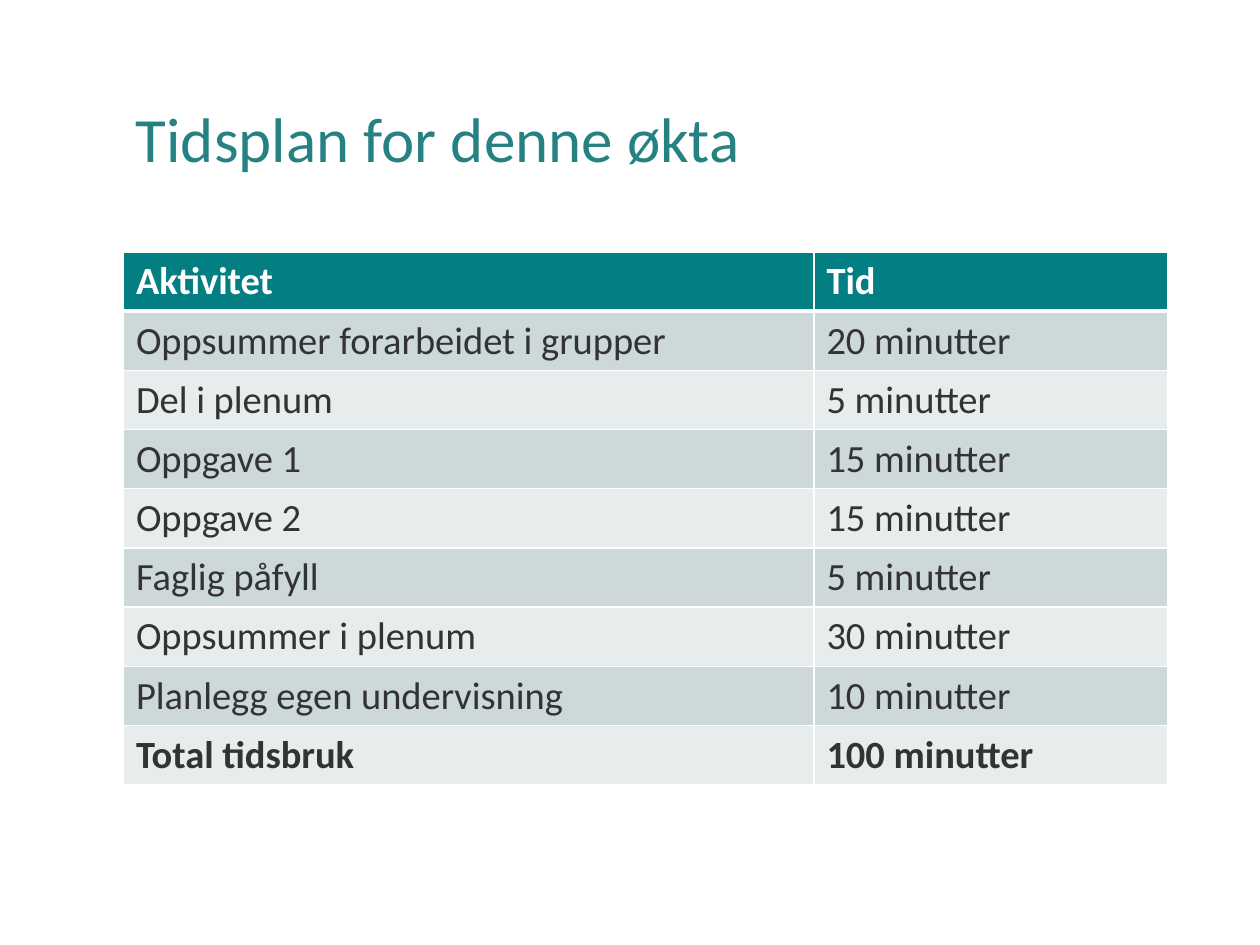
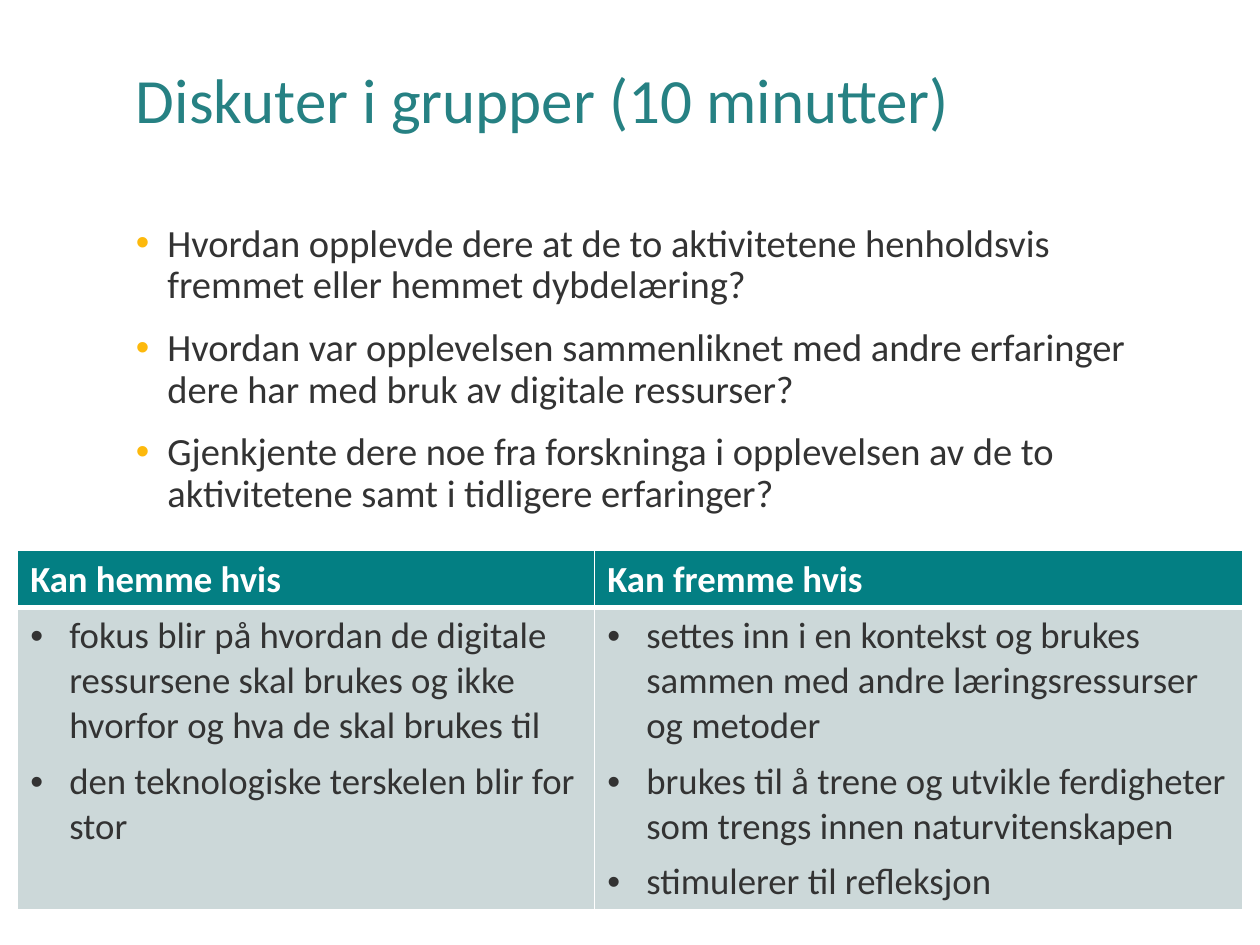
from pptx import Presentation
from pptx.dml.color import RGBColor
from pptx.enum.text import MSO_ANCHOR
from pptx.oxml.ns import qn
from pptx.util import Inches, Pt
from lxml import etree

MIDDLE = MSO_ANCHOR.MIDDLE
TOP = MSO_ANCHOR.TOP

# Content
SCHEDULE_TITLE = "Tidsplan for denne økta"
SCHEDULE = [
    ("Aktivitet", "Tid"),
    ("Oppsummer forarbeidet i grupper", "20 minutter"),
    ("Del i plenum", "5 minutter"),
    ("Oppgave 1", "15 minutter"),
    ("Oppgave 2", "15 minutter"),
    ("Faglig påfyll", "5 minutter"),
    ("Oppsummer i plenum", "30 minutter"),
    ("Planlegg egen undervisning", "10 minutter"),
    ("Total tidsbruk", "100 minutter"),
]

DISCUSSION_TITLE = "Diskuter i grupper (10 minutter)"
QUESTIONS = [
    "Hvordan opplevde dere at de to aktivitetene henholdsvis fremmet eller hemmet dybdelæring?",
    "Hvordan var opplevelsen sammenliknet med andre erfaringer dere har med bruk av digitale ressurser?",
    "Gjenkjente dere noe fra forskninga i opplevelsen av de to aktivitetene samt i tidligere erfaringer?",
]
HINDERS = [
    "fokus blir på hvordan de digitale ressursene skal brukes og ikke hvorfor og hva de skal brukes til",
    "den teknologiske terskelen blir for stor",
]
PROMOTES = [
    "settes inn i en kontekst og brukes sammen med andre læringsressurser og metoder",
    "brukes til å trene og utvikle ferdigheter som trengs innen naturvitenskapen",
    "stimulerer til refleksjon",
]
CONDITIONS = [("Kan hemme hvis", "Kan fremme hvis"), (HINDERS, PROMOTES)]

# Shared style
FONT = "Calibri"
TITLE_COLOR, TEXT_COLOR, BULLET_COLOR = "268183", "333333", "FDB90C"
HEADER_FILL, BAND_FILLS, WHITE = "037F83", ("CCD8D9", "E7ECED"), "FFFFFF"
LEFT, WIDTH = 0.98, 8.29


def color(hex_text):
    return RGBColor.from_string(hex_text)


def add_bullet(para, indent, bullet_color):
    properties = para._p.get_or_add_pPr()
    properties.set("marL", str(Inches(indent)))
    properties.set("indent", str(-Inches(indent)))
    bullet_fill = etree.SubElement(properties, qn("a:buClr"))
    etree.SubElement(bullet_fill, qn("a:srgbClr"), val=bullet_color)
    etree.SubElement(properties, qn("a:buFont"), typeface="Arial")
    etree.SubElement(properties, qn("a:buChar"), char="•")


def write(frame, texts, size, text_color, bold=False, line_spacing=None,
          gap=0, indent=None, bullet_color=TEXT_COLOR):
    """Fill a text frame with one paragraph per text."""
    frame.text = "\n".join(texts)
    for index, para in enumerate(frame.paragraphs):
        if indent:
            add_bullet(para, indent, bullet_color)
        if line_spacing:
            para.line_spacing = line_spacing
        if index:
            para.space_before = Pt(gap)
        for span in para.runs:
            span.font.name = FONT
            span.font.size = Pt(size)
            span.font.bold = bold
            span.font.color.rgb = color(text_color)


def add_text(page, top, height, anchor, texts, size, text_color, **style):
    box = page.shapes.add_textbox(Inches(LEFT), Inches(top), Inches(WIDTH), Inches(height))
    box.text_frame.word_wrap = True
    box.text_frame.vertical_anchor = anchor
    write(box.text_frame, texts, size, text_color, line_spacing=0.9, **style)


def add_title(page, text, height):
    add_text(page, 0.4, height, MIDDLE, [text], 36, TITLE_COLOR)


def add_borders(cell, row):
    """White rules, thicker between the header and the first row."""
    widths = {"L": 1, "R": 1, "T": 3 if row == 1 else 1, "B": 3 if row == 0 else 1}
    properties = cell._tc.get_or_add_tcPr()
    for side, width in widths.items():
        line = etree.SubElement(properties, qn(f"a:ln{side}"), w=str(Pt(width)))
        fill = etree.SubElement(line, qn("a:solidFill"))
        etree.SubElement(fill, qn("a:srgbClr"), val=WHITE)


def add_table(page, rows, left, top, column_widths, row_heights, size, bold_last=False):
    frame = page.shapes.add_table(
        len(rows), len(column_widths), Inches(left), Inches(top),
        Inches(sum(column_widths)), Inches(sum(row_heights)))
    table = frame.table
    table.horz_banding = False
    for column, width in zip(table.columns, column_widths):
        column.width = Inches(width)
    for row, (values, height) in enumerate(zip(rows, row_heights)):
        table.rows[row].height = Inches(height)
        header = row == 0
        bold = header or (bold_last and row == len(rows) - 1)
        for column, value in enumerate(values):
            cell = table.cell(row, column)
            add_borders(cell, row)
            cell.fill.solid()
            cell.fill.fore_color.rgb = color(HEADER_FILL if header else BAND_FILLS[(row - 1) % 2])
            bulleted = isinstance(value, list)
            write(cell.text_frame, value if bulleted else [value], size,
                  WHITE if header else TEXT_COLOR, bold=bold, gap=6,
                  indent=0.31 if bulleted else None)


def add_page(deck):
    page = deck.slides.add_slide(deck.slide_layouts[6])
    page.background.fill.solid()
    page.background.fill.fore_color.rgb = color(WHITE)
    return page


def main():
    deck = Presentation()
    deck.slide_width, deck.slide_height = Inches(10), Inches(7.5)

    # Schedule
    page = add_page(deck)
    add_title(page, SCHEDULE_TITLE, 1.45)
    add_table(page, SCHEDULE, LEFT, 2, (5.48, 2.81), [0.47] * len(SCHEDULE), 22, bold_last=True)

    # Group discussion
    page = add_page(deck)
    add_title(page, DISCUSSION_TITLE, 0.84)
    add_text(page, 1.73, 4.16, TOP, QUESTIONS, 22, TEXT_COLOR,
             gap=12, indent=0.25, bullet_color=BULLET_COLOR)
    add_table(page, CONDITIONS, 0.14, 4.37, (4.58, 5.14), (0.45, 2.4), 21)

    deck.save("out.pptx")


if __name__ == "__main__":
    main()
